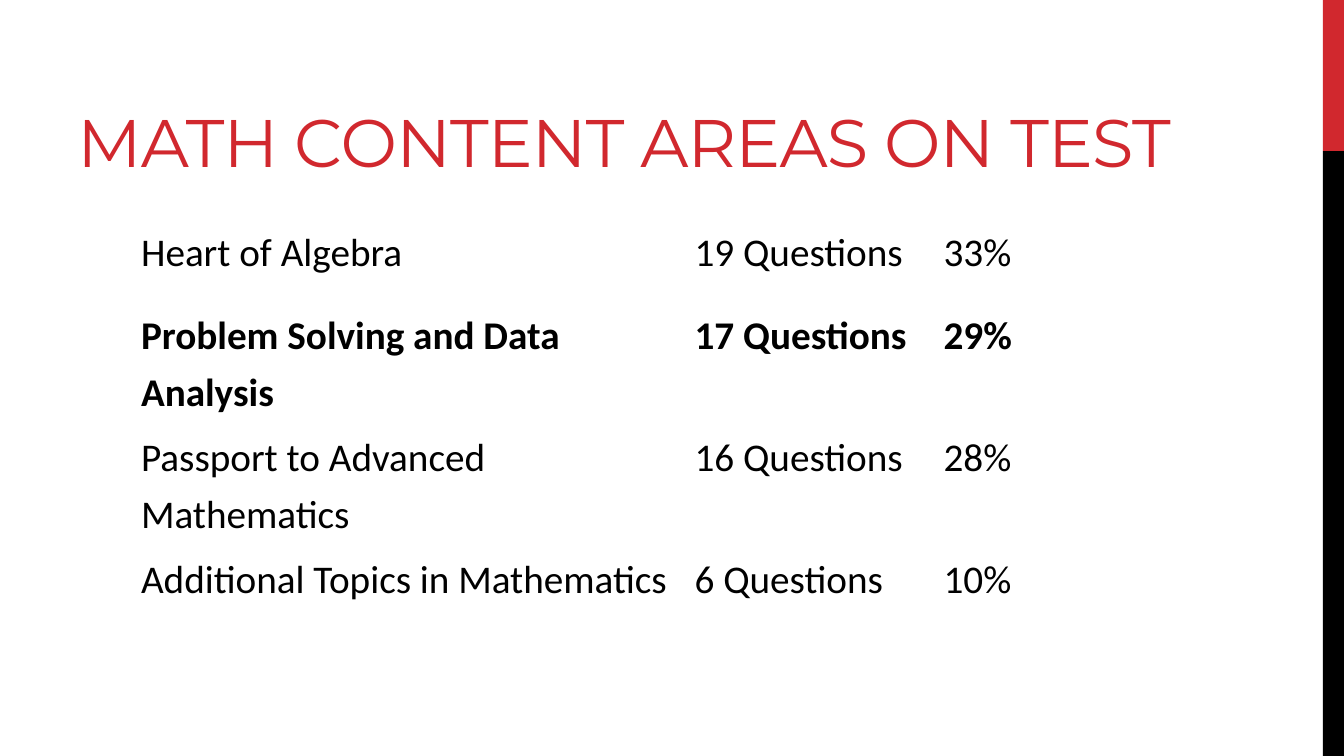
import pptx
import pptx.dml.color
import pptx.enum.shapes
import pptx.enum.text
import pptx.util

Inches = pptx.util.Inches
RED = pptx.dml.color.RGBColor(0xD1, 0x28, 0x2E)
BLACK = pptx.dml.color.RGBColor(0x00, 0x00, 0x00)

COLUMN_WIDTHS = (5.49, 2.47, 1.61)
ROW_HEIGHTS = (0.83, 1.21, 1.21, 0.83)
CONTENT_AREAS = (
    ("Heart of Algebra", "19 Questions", "33%"),
    ("Problem Solving and Data Analysis", "17 Questions", "29%"),
    ("Passport to Advanced Mathematics", "16 Questions", "28%"),
    ("Additional Topics in Mathematics", "6 Questions", "10%"),
)
BOLD_ROW = 1


def write_text(text_frame, text, *, font, size, color, bold=False,
               line_spacing=None, space_after=0, character_spacing=None):
    """Put one formatted paragraph into a text frame."""
    paragraph = text_frame.paragraphs[0]
    paragraph.line_spacing = line_spacing
    paragraph.space_after = pptx.util.Pt(space_after)
    run = paragraph.add_run()
    run.text = text
    run.font.name = font
    run.font.size = pptx.util.Pt(size)
    run.font.bold = bold
    run.font.color.rgb = color
    if character_spacing is not None:
        run.font._element.set("spc", str(round(character_spacing * 100)))


def add_bar(slide, top, height, color):
    """Add one part of the stripe along the right edge."""
    bar = slide.shapes.add_shape(
        pptx.enum.shapes.MSO_SHAPE.RECTANGLE,
        Inches(13.12), Inches(top), Inches(0.21), Inches(height))
    bar.fill.solid()
    bar.fill.fore_color.rgb = color
    bar.line.fill.background()
    bar.shadow.inherit = False


def add_title(slide, text):
    title = slide.shapes.add_textbox(
        Inches(0.67), Inches(0.17), Inches(12.04), Inches(1.67))
    title.text_frame.word_wrap = True
    title.text_frame.vertical_anchor = pptx.enum.text.MSO_ANCHOR.BOTTOM
    write_text(title.text_frame, text, font="Montserrat", size=48,
               color=RED, character_spacing=-0.6)


def add_content_table(slide):
    table = slide.shapes.add_table(
        len(CONTENT_AREAS), len(COLUMN_WIDTHS), Inches(1.36), Inches(2.14),
        Inches(sum(COLUMN_WIDTHS)), Inches(sum(ROW_HEIGHTS))).table
    table.first_row = False
    table.horz_banding = False
    for column, width in zip(table.columns, COLUMN_WIDTHS):
        column.width = Inches(width)
    for row_index, values in enumerate(CONTENT_AREAS):
        table.rows[row_index].height = Inches(ROW_HEIGHTS[row_index])
        for column_index, value in enumerate(values):
            cell = table.cell(row_index, column_index)
            cell.fill.background()
            cell.margin_left = cell.margin_right = Inches(0.04)
            cell.margin_top = cell.margin_bottom = Inches(0.04)
            write_text(cell.text_frame, value, font="Calibri", size=28,
                       color=BLACK, bold=row_index == BOLD_ROW,
                       line_spacing=1.19, space_after=6)


def main():
    presentation = pptx.Presentation()
    presentation.slide_width = Inches(13.33)
    presentation.slide_height = Inches(7.5)
    slide = presentation.slides.add_slide(presentation.slide_layouts[6])

    # Stripe on the right edge
    add_bar(slide, 0, 1.5, RED)
    add_bar(slide, 1.5, 6, BLACK)

    # Title and table
    add_title(slide, "MATH CONTENT AREAS ON TEST")
    add_content_table(slide)

    presentation.save("out.pptx")


if __name__ == "__main__":
    main()
